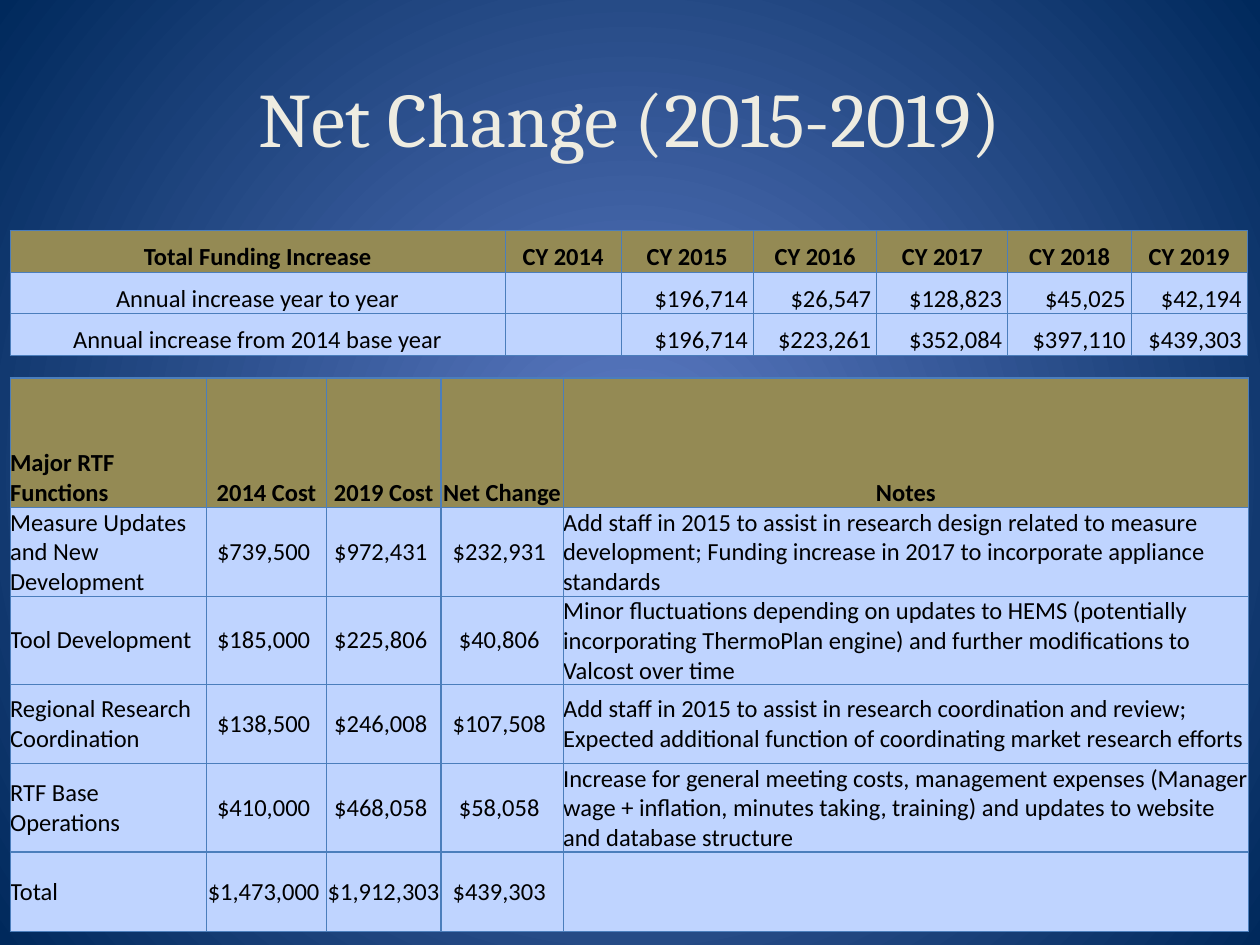
from pptx import Presentation
from pptx.dml.color import RGBColor
from pptx.enum.text import MSO_ANCHOR, PP_ALIGN
from pptx.oxml import parse_xml
from pptx.oxml.ns import nsdecls, qn
from pptx.util import Inches, Pt

LEFT, CENTER, RIGHT = PP_ALIGN.LEFT, PP_ALIGN.CENTER, PP_ALIGN.RIGHT
MIDDLE, BOTTOM = MSO_ANCHOR.MIDDLE, MSO_ANCHOR.BOTTOM

COLORS = {
    "glow": "5E7CC5",
    "navy": "00295C",
    "title": "EEECE1",
    "text": "000000",
    "header": "948A54",
    "body": "BFD4FF",
    "border": "4B7EBC",
}

FUNDING = [
    ["Total Funding Increase", "CY 2014", "CY 2015", "CY 2016", "CY 2017", "CY 2018", "CY 2019"],
    ["Annual increase year to year", "",
     "$196,714 ", "$26,547 ", "$128,823 ", "$45,025 ", "$42,194 "],
    ["Annual increase from 2014 base year", "",
     "$196,714 ", "$223,261 ", "$352,084 ", "$397,110 ", "$439,303 "],
]

FUNCTIONS = [
    ["Major RTF Functions", "2014 Cost", "2019 Cost", "Net Change", "Notes"],
    ["Measure Updates and New Development", "$739,500 ", "$972,431 ", "$232,931 ",
     "Add staff in 2015 to assist in research design related to measure development; "
     "Funding increase in 2017 to incorporate appliance standards"],
    ["Tool Development", "$185,000 ", "$225,806 ", "$40,806 ",
     "Minor fluctuations depending on updates to HEMS (potentially incorporating "
     "ThermoPlan engine) and further modifications to Valcost over time"],
    ["Regional Research Coordination", "$138,500 ", "$246,008 ", "$107,508 ",
     "Add staff in 2015 to assist in research coordination and review; "
     "Expected additional function of coordinating market research efforts"],
    ["RTF Base Operations", "$410,000 ", "$468,058 ", "$58,058 ",
     "Increase for general meeting costs, management expenses (Manager wage + inflation, "
     "minutes taking, training) and updates to website and database structure"],
    ["Total", "$1,473,000 ", "$1,912,303 ", "$439,303 ", ""],
]


def rgb(name):
    """Return the named palette colour."""
    return RGBColor.from_string(COLORS[name])


def set_background(s):
    """Fill the slide with a radial gradient, bright at the centre."""
    fill = s.background.fill
    fill.gradient()
    for stop, name, position in zip(fill.gradient_stops, ("glow", "navy"), (0, 1)):
        stop.color.rgb = rgb(name)
        stop.position = position
    grad = s._element.find(".//" + qn("a:gradFill"))
    grad.remove(grad.find(qn("a:lin")))
    grad.append(parse_xml(
        f'<a:path {nsdecls("a")} path="circle">'
        '<a:fillToRect l="50000" t="50000" r="50000" b="50000"/></a:path>'))


def add_run(p, text, font, size, color, bold=False):
    """Append a formatted run to a paragraph."""
    r = p.add_run()
    r.text = text
    r.font.name = font
    r.font.size = Pt(size)
    r.font.bold = bold
    r.font.color.rgb = rgb(color)


def add_title(s, text):
    """Add the centred slide title."""
    sp = s.shapes.add_textbox(Inches(0.5), Inches(0.3), Inches(9), Inches(1.25))
    tf = sp.text_frame
    tf.word_wrap = True
    tf.vertical_anchor = MIDDLE
    p = tf.paragraphs[0]
    p.alignment = CENTER
    add_run(p, text, "Cambria", 44, "title")


def set_borders(cell):
    """Draw a thin line on all four sides of a cell."""
    pr = cell._tc.get_or_add_tcPr()
    for i, side in enumerate(("lnL", "lnR", "lnT", "lnB")):
        pr.insert(i, parse_xml(
            f'<a:{side} {nsdecls("a")} w="{Pt(0.75)}"><a:solidFill>'
            f'<a:srgbClr val="{COLORS["border"]}"/></a:solidFill></a:{side}>'))


def fill_cell(cell, text, align, anchor, header):
    """Set the text, fill and borders of one cell."""
    cell.margin_left = cell.margin_right = cell.margin_top = cell.margin_bottom = 0
    cell.vertical_anchor = anchor
    cell.fill.solid()
    cell.fill.fore_color.rgb = rgb("header" if header else "body")
    set_borders(cell)
    p = cell.text_frame.paragraphs[0]
    p.alignment = align
    if text:
        add_run(p, text, "Calibri", 14, "text", header)
    else:
        p.font.size = Pt(14)


def add_grid(s, top, rows, widths, heights, head_aligns, body_aligns, body_anchor):
    """Add a table with one header row."""
    table = s.shapes.add_table(len(rows), len(widths), Inches(0.08), Inches(top),
                               Inches(sum(widths)), Inches(sum(heights))).table
    for col, width in zip(table.columns, widths):
        col.width = Inches(width)
    for i, (values, height) in enumerate(zip(rows, heights)):
        table.rows[i].height = Inches(height)
        header = i == 0
        aligns = head_aligns if header else body_aligns
        anchor = BOTTOM if header else body_anchor
        for j, (text, align) in enumerate(zip(values, aligns)):
            fill_cell(table.cell(i, j), text, align, anchor, header)


def main():
    """Build the slide and save it."""
    prs = Presentation()
    prs.slide_width, prs.slide_height = Inches(10), Inches(7.5)
    s = prs.slides.add_slide(prs.slide_layouts[6])
    set_background(s)
    add_title(s, "Net Change (2015-2019)")
    add_grid(s, 3, FUNCTIONS, [1.56, 0.95, 0.91, 0.97, 5.44], [1.03] + [0.63] * 5,
             [LEFT] + [CENTER] * 4, [LEFT] + [CENTER] * 3 + [LEFT], MIDDLE)
    add_grid(s, 1.83, FUNDING, [3.93, 0.92, 1.05, 0.98, 1.04, 0.98, 0.92], [0.33] * 3,
             [CENTER] * 7, [CENTER] + [RIGHT] * 6, BOTTOM)
    prs.save("out.pptx")


if __name__ == "__main__":
    main()
